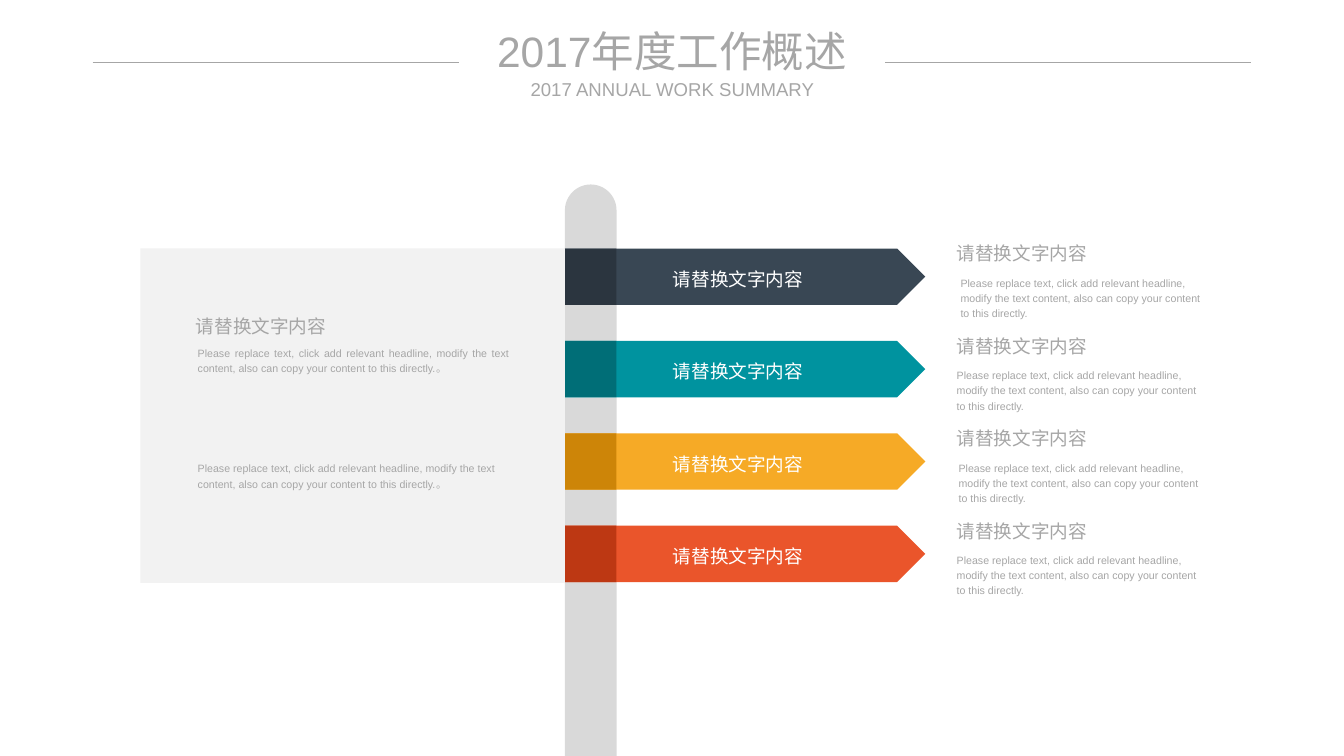
import pptx
import pptx.util
import pptx.dml.color
import pptx.oxml
import pptx.enum.shapes
import pptx.enum.text

Inches = pptx.util.Inches
Shapes = pptx.enum.shapes.MSO_SHAPE
Align = pptx.enum.text.PP_ALIGN
Anchor = pptx.enum.text.MSO_ANCHOR

TITLE = "2017年度工作概述"
SUBTITLE = "2017 ANNUAL WORK SUMMARY"
HEADING = "请替换文字内容"
DETAIL = ("Please replace text, click add relevant headline, modify the text content, "
          "also can copy your content to this directly.")
PANEL_DETAIL = DETAIL + "。"
GREY = "A6A6A6"
ARROWS = [
    {"fill": "394754", "fold": "2B353F", "detail_left": 9.95},
    {"fill": "00939F", "fold": "006E77", "detail_left": 9.91},
    {"fill": "F6AA26", "fold": "CD8508", "detail_left": 9.93},
    {"fill": "EA552B", "fold": "BD3813", "detail_left": 9.91},
]
PANEL_TEXTS = [
    (HEADING, (1.95, 3.2, 1.68, 0.36), 14, Align.LEFT),
    (PANEL_DETAIL, (1.97, 3.55, 3.46, 0.41), 8, Align.JUSTIFY),
    (PANEL_DETAIL, (1.97, 4.76, 3.46, 0.41), 8, Align.LEFT),
]
RULES = [(0.97, 4.8), (9.26, 13.09)]
RULE_TOP = 0.65

POST_LEFT, POST_WIDTH = 5.91, 0.54
ARROW_WIDTH, ARROW_HEIGHT = 3.77, 0.59
FIRST_TOP, LAST_TOP = 2.6, 5.5
PITCH = (LAST_TOP - FIRST_TOP) / (len(ARROWS) - 1)


def colour(value):
    return pptx.dml.color.RGBColor.from_string(value)


def write(shape, text, size=14, ink=GREY, align=Align.LEFT, spacing=1.2,
          anchor=Anchor.TOP, inset=None):
    frame = shape.text_frame
    frame.word_wrap = True
    frame.auto_size = pptx.enum.text.MSO_AUTO_SIZE.NONE
    frame.vertical_anchor = anchor
    if inset is not None:
        frame.margin_left = frame.margin_right = Inches(inset)
        frame.margin_top = frame.margin_bottom = Inches(inset)
    para = frame.paragraphs[0]
    para.alignment = align
    para.line_spacing = spacing
    span = para.add_run()
    span.text = text
    span.font.size = pptx.util.Pt(size)
    span.font.name = "Arial"
    span.font.color.rgb = colour(ink)


def add_text(page, text, place, **style):
    box = page.shapes.add_textbox(*map(Inches, place))
    write(box, text, **style)


def add_block(page, kind, place, fill):
    block = page.shapes.add_shape(kind, *map(Inches, place))
    block.shadow.inherit = False
    block.fill.solid()
    block.fill.fore_color.rgb = colour(fill)
    block.line.fill.background()
    return block


def add_rule(page, start, end):
    rule = page.shapes.add_connector(
        pptx.enum.shapes.MSO_CONNECTOR.STRAIGHT,
        Inches(start), Inches(RULE_TOP), Inches(end), Inches(RULE_TOP))
    rule.line.color.rgb = colour(GREY)
    rule.line.width = pptx.util.Pt(0.5)
    properties = rule._element.spPr
    properties.append(pptx.oxml.parse_xml(
        '<a:effectLst xmlns:a="http://schemas.openxmlformats.org/drawingml/2006/main"/>'))


def add_header(page):
    title = page.shapes.title
    title.left, title.top, title.width, title.height = map(Inches, (4.87, 0.26, 4.32, 0.54))
    centred = {"align": Align.CENTER, "spacing": 1.0, "anchor": Anchor.MIDDLE, "inset": 0}
    write(title, TITLE, size=32, **centred)
    add_text(page, SUBTITLE, (5.5, 0.81, 3.07, 0.24), **centred)
    for start, end in RULES:
        add_rule(page, start, end)


def add_arrow(page, top, fill, fold, detail_left):
    arrow = add_block(page, Shapes.PENTAGON, (POST_LEFT, top, ARROW_WIDTH, ARROW_HEIGHT), fill)
    write(arrow, HEADING, ink="FFFFFF", align=Align.CENTER, anchor=Anchor.MIDDLE)
    add_block(page, Shapes.RECTANGLE, (POST_LEFT, top, POST_WIDTH, ARROW_HEIGHT), fold)
    add_text(page, HEADING, (9.91, top - 0.16, 1.63, 0.36))
    add_text(page, DETAIL, (detail_left, top + 0.22, 2.73, 0.57), size=8)


def main():
    deck = pptx.Presentation()
    deck.slide_width, deck.slide_height = Inches(14.06), Inches(7.91)
    page = deck.slides.add_slide(deck.slide_layouts[5])
    add_header(page)

    post = add_block(page, Shapes.ROUND_2_SAME_RECTANGLE,
                     (POST_LEFT, 1.93, POST_WIDTH, 5.98), "D9D9D9")
    post.adjustments[0] = 0.5
    post.adjustments[1] = 0
    for index, arrow in enumerate(ARROWS):
        add_arrow(page, FIRST_TOP + index * PITCH, **arrow)

    add_block(page, Shapes.RECTANGLE, (1.47, FIRST_TOP, POST_LEFT - 1.47, 3.5), "F2F2F2")
    for text, place, size, align in PANEL_TEXTS:
        add_text(page, text, place, size=size, align=align)

    deck.save("out.pptx")


if __name__ == "__main__":
    main()
